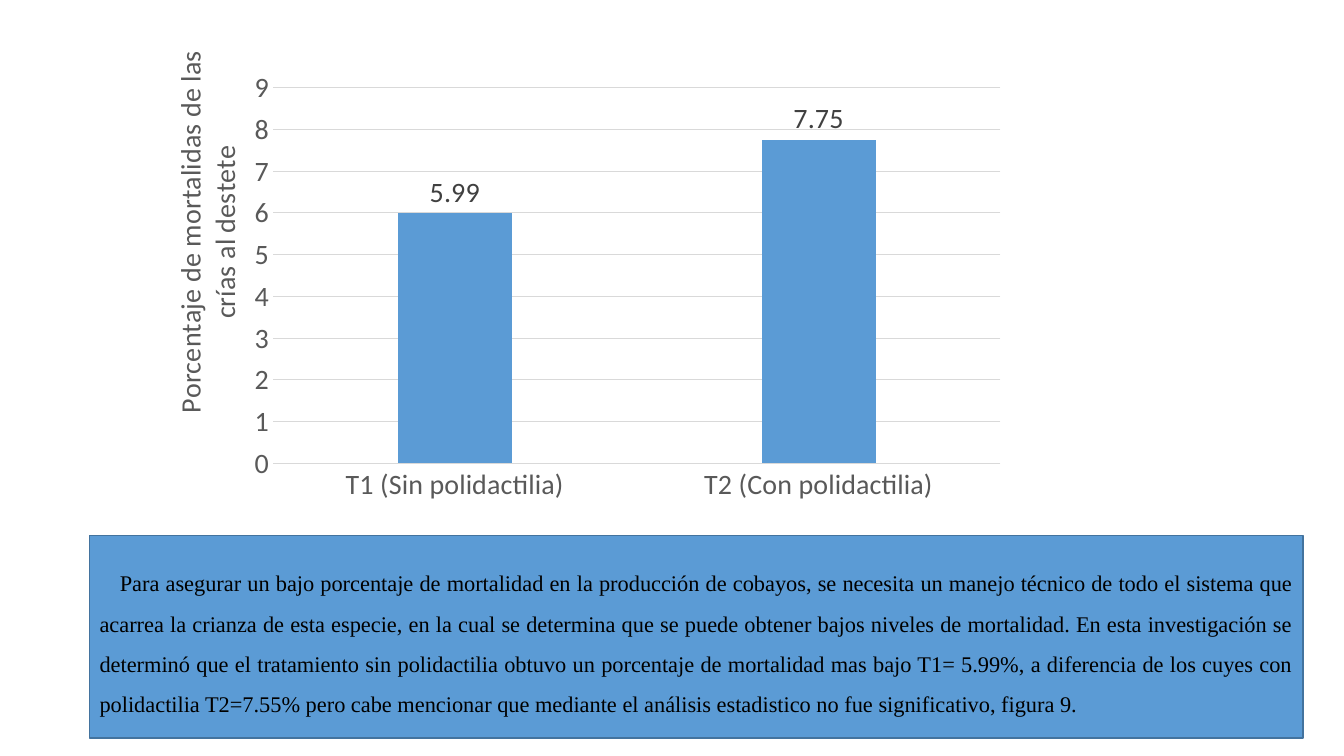
from dataclasses import dataclass

from lxml import etree
from pptx import Presentation
from pptx.chart.data import CategoryChartData
from pptx.dml.color import RGBColor
from pptx.enum import chart as c, shapes, text
from pptx.oxml import ns
from pptx.util import Cm, Pt


@dataclass(frozen=True)
class Theme:
    blue: RGBColor = RGBColor(0x5B, 0x9B, 0xD5)
    border: RGBColor = RGBColor(0x43, 0x73, 0x9E)
    grid: RGBColor = RGBColor(0xD9, 0xD9, 0xD9)
    axis: RGBColor = RGBColor(0x59, 0x59, 0x59)
    label: RGBColor = RGBColor(0x40, 0x40, 0x40)
    black: RGBColor = RGBColor(0, 0, 0)
    chart_font: str = "Calibri"
    body_font: str = "Times New Roman"
    chart_size: Pt = Pt(20)
    body_size: Pt = Pt(16)


theme = Theme()


def format_font(font, color, name=theme.chart_font, size=theme.chart_size):
    for key, value in {"name": name, "size": size, "bold": False}.items():
        setattr(font, key, value)
    font.color.rgb = color


def place(element, values):
    """Give a chart part a manual layout, as fractions of the chart."""
    layout = element.find(ns.qn("c:layout"))
    if layout is None:
        layout = etree.Element(ns.qn("c:layout"))
        element.insert(0, layout)
    manual = etree.SubElement(layout, ns.qn("c:manualLayout"))
    for key, value in values.items():
        etree.SubElement(manual, ns.qn(f"c:{key}")).set("val", str(value))


presentation = Presentation()
presentation.slide_width, presentation.slide_height = Cm(33.87), Cm(19.05)
slide = presentation.slides.add_slide(presentation.slide_layouts[6])

# Mortality chart
data = CategoryChartData()
data.categories = ["T1 (Sin polidactilia)", "T2 (Con polidactilia)"]
data.add_series("Series 1", (5.99, 7.75))
chart = slide.shapes.add_chart(
    c.XL_CHART_TYPE.COLUMN_CLUSTERED, Cm(3.71), Cm(0), Cm(22.17), Cm(12.93), data
).chart
chart.has_legend = False
chart.has_title = False
format_font(chart.font, theme.black)
place(chart.plots[0]._element.getparent(), {
    "layoutTarget": "inner", "xMode": "edge", "yMode": "edge",
    "x": 0.143, "y": 0.171, "w": 0.827, "h": 0.732,
})

for axis in (chart.category_axis, chart.value_axis):
    axis.major_tick_mark = axis.minor_tick_mark = c.XL_TICK_MARK.NONE
    format_font(axis.tick_labels.font, theme.axis)
category_axis, value_axis = chart.category_axis, chart.value_axis
value_axis.format.line.fill.background()
value_axis.minimum_scale, value_axis.maximum_scale, value_axis.major_unit = 0, 9, 1
for line in (category_axis.format.line, value_axis.major_gridlines.format.line):
    line.color.rgb = theme.grid
    line.width = Pt(0.75)

axis_title = value_axis.axis_title
paragraph = axis_title.text_frame.paragraphs[0]
run = paragraph.add_run()
run.text = "Porcentaje de mortalidas de las crías al destete"
for font in (paragraph.font, run.font):
    format_font(font, theme.axis)
body = axis_title.text_frame._txBody.bodyPr
body.set("rot", "-5400000")
body.set("vert", "horz")
place(axis_title._element, {"xMode": "edge", "yMode": "edge", "x": 0.02, "y": 0.09})

plot = chart.plots[0]
for key, value in {"gap_width": 219, "overlap": -27, "vary_by_categories": False,
                   "has_data_labels": True}.items():
    setattr(plot, key, value)
plot.series[0].format.fill.solid()
plot.series[0].format.fill.fore_color.rgb = theme.blue
labels = plot.data_labels
labels.show_value = True
labels.position = c.XL_LABEL_POSITION.OUTSIDE_END
format_font(labels.font, theme.label)

# Discussion box
box = slide.shapes.add_shape(
    shapes.MSO_SHAPE.RECTANGLE, Cm(2.26), Cm(13.49), Cm(30.58), Cm(5.11)
)
box.shadow.inherit = False
box.fill.solid()
box.fill.fore_color.rgb = theme.blue
box.line.color.rgb = theme.border
box.line.width = Pt(1)
box.text_frame.word_wrap = True
box.text_frame.vertical_anchor = text.MSO_ANCHOR.MIDDLE
paragraph = box.text_frame.paragraphs[0]
for key, value in {"alignment": text.PP_ALIGN.JUSTIFY, "line_spacing": 1.5,
                   "space_after": Pt(12)}.items():
    setattr(paragraph, key, value)
paragraph._p.get_or_add_pPr().set("indent", str(Cm(0.51)))
run = paragraph.add_run()
run.text = (
    "Para asegurar un bajo porcentaje de mortalidad en la producción de cobayos, se "
    "necesita un manejo técnico de todo el sistema que acarrea la crianza de esta "
    "especie, en la cual se determina que se puede obtener bajos niveles de mortalidad. "
    "En esta investigación se determinó que el tratamiento sin polidactilia obtuvo un "
    "porcentaje de mortalidad mas bajo T1= 5.99%, a diferencia de los cuyes con "
    "polidactilia T2=7.55% pero cabe mencionar que mediante el análisis estadistico no "
    "fue significativo, figura 9."
)
format_font(run.font, theme.black, theme.body_font, theme.body_size)

presentation.save("out.pptx")
